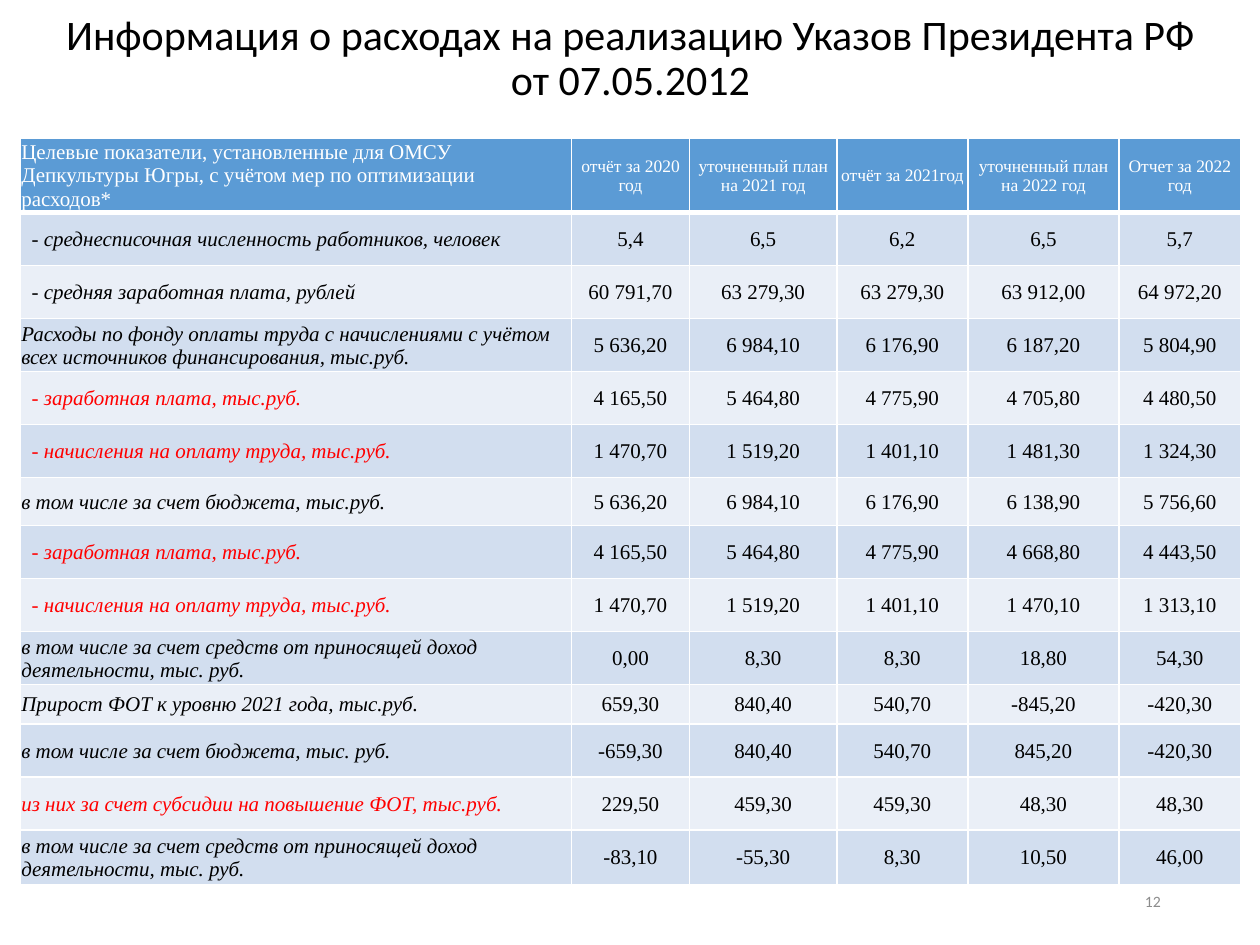
"""Build the slide on spending under the presidential decrees of 07.05.2012."""
from lxml import etree
from pptx import Presentation, util as u
from pptx.dml.color import RGBColor
from pptx.enum import text as t
from pptx.oxml import ns

TITLE = "Информация о расходах на реализацию Указов Президента РФ от 07.05.2012"
PAGE = "12"
HEADINGS = [
    "Целевые показатели, установленные для ОМСУ Депкультуры Югры, с учётом мер по оптимизации расходов*",
    "отчёт за 2020 год", "уточненный план на 2021 год", "отчёт за 2021год",
    "уточненный план на 2022 год", "Отчет за 2022 год",
]
INDICATORS = [
    ("- среднесписочная численность работников, человек", "5,4|6,5|6,2|6,5|5,7"),
    ("- средняя заработная плата, рублей", "60 791,70|63 279,30|63 279,30|63 912,00|64 972,20"),
    ("Расходы по фонду оплаты труда с начислениями с учётом всех источников финансирования, тыс.руб.",
     "5 636,20|6 984,10|6 176,90|6 187,20|5 804,90"),
    ("- заработная плата, тыс.руб.", "4 165,50|5 464,80|4 775,90|4 705,80|4 480,50"),
    ("- начисления на оплату труда, тыс.руб.", "1 470,70|1 519,20|1 401,10|1 481,30|1 324,30"),
    ("в том числе за счет бюджета, тыс.руб.", "5 636,20|6 984,10|6 176,90|6 138,90|5 756,60"),
    ("- заработная плата, тыс.руб.", "4 165,50|5 464,80|4 775,90|4 668,80|4 443,50"),
    ("- начисления на оплату труда, тыс.руб.", "1 470,70|1 519,20|1 401,10|1 470,10|1 313,10"),
    ("в том числе за счет средств от приносящей доход деятельности, тыс. руб.",
     "0,00|8,30|8,30|18,80|54,30"),
    ("Прирост ФОТ к уровню 2021 года, тыс.руб.", "659,30|840,40|540,70|-845,20|-420,30"),
    ("в том числе за счет бюджета, тыс. руб.", "-659,30|840,40|540,70|845,20|-420,30"),
    ("из них за счет субсидии на повышение ФОТ, тыс.руб.", "229,50|459,30|459,30|48,30|48,30"),
    ("в том числе за счет средств от приносящей доход деятельности, тыс. руб.",
     "-83,10|-55,30|8,30|10,50|46,00"),
]
RED_STARTS = ("- заработная", "- начисления", "из них")
COLUMN_WIDTHS = [11.12, 2.38, 2.97, 2.64, 3.05, 2.45]
ROW_HEIGHT = 1.07
SPECIAL_HEIGHTS = {0: 1.5, 6: 0.96, 10: 0.79, 13: 1.1}
HEADER_FILL, BANDS = "5B9BD5", ("EAEFF7", "D2DEEF")
WHITE, BLACK, RED, GREY = "FFFFFF", "000000", "FF0000", "8C8C8C"
LEFT, CENTER, RIGHT = t.PP_ALIGN.LEFT, t.PP_ALIGN.CENTER, t.PP_ALIGN.RIGHT


def rgb(code):
    """Turn a hex string into a colour."""
    return RGBColor.from_string(code)


def write(frame, content, size=12, font="Times New Roman", color=BLACK,
          italic=False, align=LEFT, spacing=1.0):
    """Put one formatted paragraph into a text frame."""
    frame.word_wrap = True
    paragraph = frame.paragraphs[0]
    paragraph.alignment, paragraph.line_spacing = align, spacing
    run = paragraph.add_run()
    run.text = content
    run.font.size, run.font.name = u.Pt(size), font
    run.font.bold, run.font.italic = False, italic
    run.font.color.rgb = rgb(color)


def dress(cell, fill, indent=0.0, bottom=1):
    """Give a cell its margins, white borders and fill."""
    cell.margin_left = u.Cm(0.03 + indent)
    cell.margin_top = cell.margin_right = u.Cm(0.03)
    cell.margin_bottom = 0
    cell.vertical_anchor = t.MSO_ANCHOR.MIDDLE
    properties = cell._tc.get_or_add_tcPr()
    for side, width in (("L", 1), ("R", 1), ("T", 1), ("B", bottom)):
        border = etree.SubElement(properties, ns.qn(f"a:ln{side}"), w=str(u.Pt(width)))
        paint = etree.SubElement(border, ns.qn("a:solidFill"))
        etree.SubElement(paint, ns.qn("a:srgbClr"), val=WHITE)
    cell.fill.solid()
    cell.fill.fore_color.rgb = rgb(fill)


def add_title(slide):
    """Place and format the title."""
    title = slide.shapes.title
    title.left, title.top = u.Cm(0.8), u.Cm(0)
    title.width, title.height = u.Cm(23.82), u.Cm(2.4)
    title.text_frame.vertical_anchor = t.MSO_ANCHOR.MIDDLE
    title.text_frame.auto_size = t.MSO_AUTO_SIZE.NONE
    write(title.text_frame, TITLE, size=24, font="Calibri", align=CENTER, spacing=0.9)


def add_indicators(slide):
    """Add the table of indicators by year."""
    heights = [SPECIAL_HEIGHTS.get(row, ROW_HEIGHT) for row in range(len(INDICATORS) + 1)]
    table = slide.shapes.add_table(
        len(heights), len(COLUMN_WIDTHS), u.Cm(0.4), u.Cm(2.78),
        u.Cm(sum(COLUMN_WIDTHS)), u.Cm(sum(heights))).table
    for column, width in zip(table.columns, COLUMN_WIDTHS):
        column.width = u.Cm(width)
    for row, height in zip(table.rows, heights):
        row.height = u.Cm(height)

    for column, heading in enumerate(HEADINGS):
        cell = table.cell(0, column)
        dress(cell, HEADER_FILL, bottom=3)
        write(cell.text_frame, heading, size=10 if column else 12, color=WHITE,
              align=CENTER if column else LEFT)

    for row, (label, values) in enumerate(INDICATORS, 1):
        name, *amounts = table.rows[row].cells
        dress(name, BANDS[row % 2], indent=0.21 if label.startswith("-") else 0)
        write(name.text_frame, label, italic=True,
              color=RED if label.startswith(RED_STARTS) else BLACK)
        for cell, value in zip(amounts, values.split("|")):
            dress(cell, BANDS[row % 2])
            write(cell.text_frame, value, align=CENTER)


def add_page_number(slide):
    """Add the page number at the lower right."""
    number = slide.shapes.add_textbox(u.Cm(17.93), u.Cm(17.65), u.Cm(5.72), u.Cm(1.02))
    number.text_frame.vertical_anchor = t.MSO_ANCHOR.MIDDLE
    write(number.text_frame, PAGE, size=9, font="Calibri", color=GREY, align=RIGHT)


def main():
    """Assemble and save the slide."""
    deck = Presentation()
    deck.slide_width, deck.slide_height = u.Cm(25.4), u.Cm(19.05)
    slide = deck.slides.add_slide(deck.slide_layouts[5])
    add_title(slide)
    add_indicators(slide)
    add_page_number(slide)
    deck.save("out.pptx")


if __name__ == "__main__":
    main()
